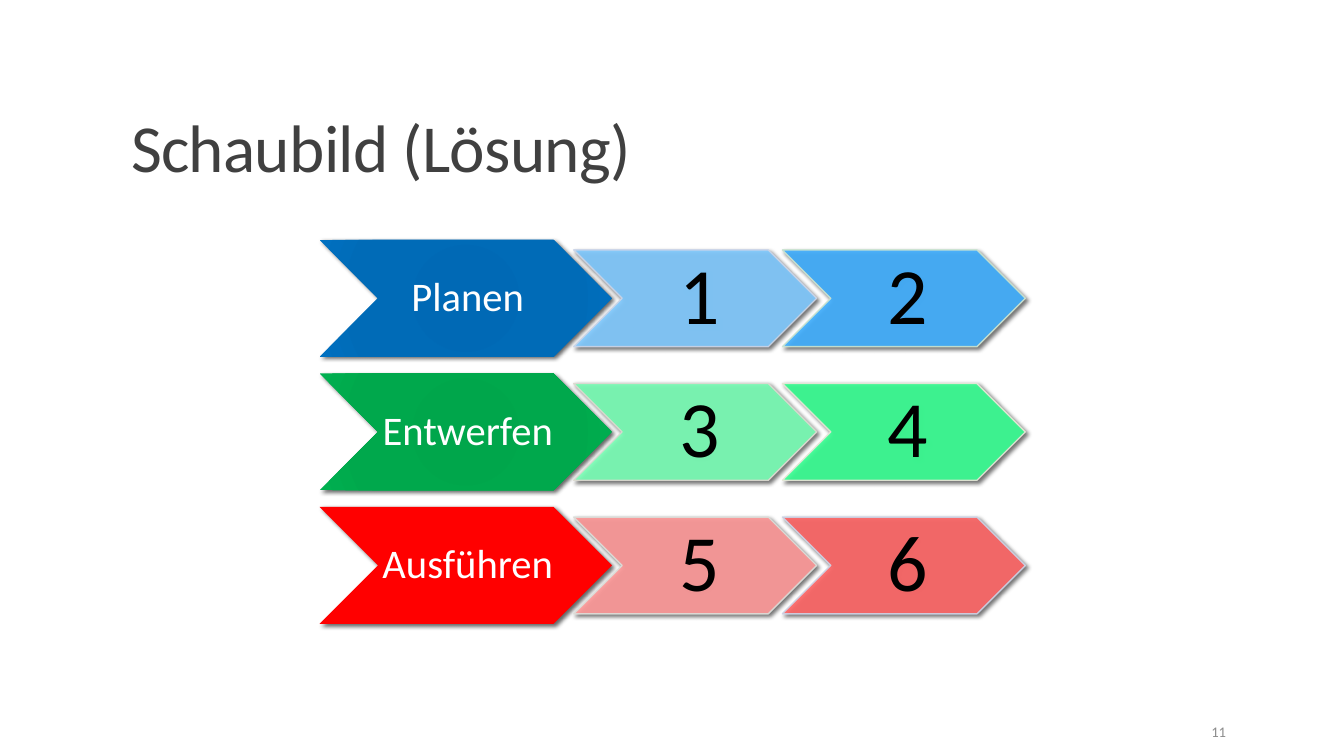
from pptx import Presentation
from pptx.dml.color import RGBColor
from pptx.enum.shapes import MSO_SHAPE
from pptx.enum.text import MSO_ANCHOR, MSO_AUTO_SIZE, PP_ALIGN
from pptx.oxml import parse_xml
from pptx.oxml.ns import nsdecls, qn
from pptx.util import Pt

PX = 9144  # 100 px to the inch
FONT = "Calibri"
WHITE = RGBColor(0xFF, 0xFF, 0xFF)
BLACK = RGBColor(0x00, 0x00, 0x00)
TITLE_GRAY = RGBColor(0x40, 0x40, 0x40)
NUMBER_GRAY = RGBColor(0x8C, 0x8C, 0x8C)
RED = RGBColor(0xFF, 0x00, 0x00)
BLUES = [RGBColor(0x00, 0x68, 0xB3), RGBColor(0x00, 0x69, 0xB5),
         RGBColor(0x00, 0x6B, 0xB7), RGBColor(0x00, 0x70, 0xC0)]
GREENS = [RGBColor(0x00, 0xA4, 0x4B), RGBColor(0x00, 0xA6, 0x4B),
          RGBColor(0x00, 0xA8, 0x4C), RGBColor(0x00, 0xB0, 0x50)]
GRADIENT_STOPS = [0, 34, 70, 100]

# Each row: label, head colours, then (text, fill, outline) for each step
ROWS = [
    ("Planen", BLUES, [
        ("1", RGBColor(0x80, 0xCA, 0xFF), RGBColor(0xCC, 0xD5, 0xE8)),
        ("2", RGBColor(0x40, 0xAF, 0xFF), RGBColor(0xCC, 0xE4, 0xD0))]),
    ("Entwerfen", GREENS, [
        ("3", RGBColor(0x79, 0xFF, 0xB6), RGBColor(0xDE, 0xD9, 0xD1)),
        ("4", RGBColor(0x37, 0xFF, 0x92), RGBColor(0xE9, 0xE7, 0xD8))]),
    ("Ausführen", [RED], [
        ("5", RGBColor(0xFF, 0x99, 0x99), RGBColor(0xDC, 0xDF, 0xDA)),
        ("6", RGBColor(0xFF, 0x66, 0x66), RGBColor(0xCC, 0xD5, 0xE8))]),
]
HEAD_SIZE = (290, 116)
STEP_SIZE = (241, 96)
FIRST_STEP = 252
STEP_PITCH = 207


def px(*lengths):
    return [round(length * PX) for length in lengths]


def write_text(shape, text, size, color, align=PP_ALIGN.LEFT, anchor=MSO_ANCHOR.MIDDLE,
               spacing=1.0, insets=(10, 5, 10, 5), wrap=True, tracking=None):
    frame = shape.text_frame
    frame.auto_size = MSO_AUTO_SIZE.NONE
    frame.word_wrap = wrap
    frame.vertical_anchor = anchor
    (frame.margin_left, frame.margin_top,
     frame.margin_right, frame.margin_bottom) = px(*insets)
    paragraph = frame.paragraphs[0]
    paragraph.alignment = align
    paragraph.line_spacing = spacing
    run = paragraph.add_run()
    run.text = text
    run.font.name = FONT
    run.font.size = Pt(size)
    run.font.color.rgb = color
    if tracking is not None:
        run.font._element.set("spc", str(round(tracking * 100)))


def set_gradient(shape, colors):
    stops = "".join(
        f'<a:gs pos="{position * 1000}"><a:srgbClr val="{color}"/></a:gs>'
        for position, color in zip(GRADIENT_STOPS, colors))
    shape.fill.gradient()
    properties = shape._element.spPr
    properties.replace(properties.find(qn("a:gradFill")), parse_xml(
        f'<a:gradFill {nsdecls("a")} rotWithShape="1"><a:gsLst>{stops}</a:gsLst>'
        '<a:path path="circle"><a:fillToRect l="100000" t="100000" r="100000" b="100000"/>'
        '</a:path></a:gradFill>'))


def add_shadow(shape):
    shape.shadow.inherit = False
    shape._element.spPr.find(qn("a:effectLst")).append(parse_xml(
        f'<a:outerShdw {nsdecls("a")} blurRad="38100" dist="25400" dir="2700000" '
        'rotWithShape="0"><a:srgbClr val="000000"><a:alpha val="60000"/></a:srgbClr>'
        '</a:outerShdw>'))


def add_chevron(slide, left, top, size, colors, outline=None):
    shape = slide.shapes.add_shape(MSO_SHAPE.CHEVRON, *px(left, top, *size))
    if len(colors) > 1:
        set_gradient(shape, colors)
    else:
        shape.fill.solid()
        shape.fill.fore_color.rgb = colors[0]
    if outline is None:
        shape.line.fill.background()
    else:
        shape.line.color.rgb = outline
        shape.line.width = Pt(1)
        # Steps are slightly see-through, outline included
        for color in shape._element.spPr.iter(qn("a:srgbClr")):
            color.append(parse_xml(f'<a:alpha {nsdecls("a")} val="90000"/>'))
    add_shadow(shape)
    return shape


def add_row(slide, left, top, label, colors, steps):
    head = add_chevron(slide, left, top, HEAD_SIZE, colors)
    write_text(head, label, 29, WHITE, align=PP_ALIGN.CENTER, spacing=0.9,
               insets=(4, 2, 0, 2), wrap=False)
    step_top = top + (HEAD_SIZE[1] - STEP_SIZE[1]) / 2
    for index, (text, fill, outline) in enumerate(steps):
        step_left = left + FIRST_STEP + index * STEP_PITCH
        step = add_chevron(slide, step_left, step_top, STEP_SIZE, [fill], outline)
        write_text(step, text, 57, BLACK, align=PP_ALIGN.CENTER, spacing=0.9,
                   insets=(8, 4, 0, 4), wrap=False)


def add_process(slide, left, top, height):
    pitch = (height - HEAD_SIZE[1]) / (len(ROWS) - 1)
    for index, row in enumerate(ROWS):
        add_row(slide, left, top + index * pitch, *row)


def add_title(slide, left, top, width, height):
    title = slide.shapes.title
    title.left, title.top, title.width, title.height = px(left, top, width, height)
    write_text(title, "Schaubild (Lösung)", 48, TITLE_GRAY, anchor=MSO_ANCHOR.BOTTOM,
               spacing=0.85, tracking=-0.5)


def add_slide_number(slide, left, top, width, height):
    box = slide.shapes.add_textbox(*px(left, top, width, height))
    write_text(box, "11", 10.5, NUMBER_GRAY, align=PP_ALIGN.RIGHT)


def main():
    presentation = Presentation()
    presentation.slide_width, presentation.slide_height = px(1333, 750)
    slide = presentation.slides.add_slide(presentation.slide_layouts[5])
    add_title(slide, 120, 31, 1100, 159)
    add_process(slide, 317, 238, 381)
    add_slide_number(slide, 1083, 706, 143, 40)
    presentation.save("out.pptx")


if __name__ == "__main__":
    main()
